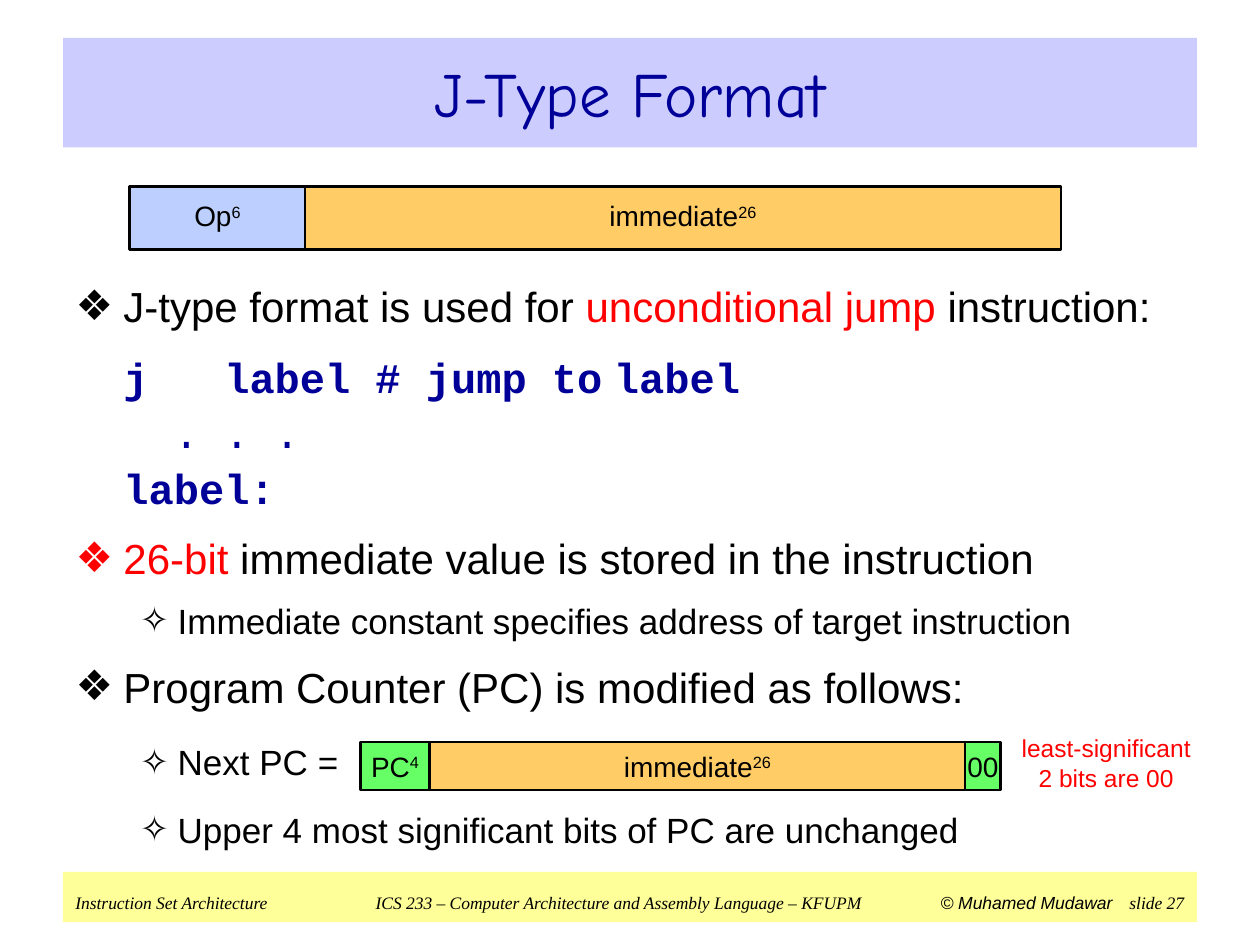
"""Build the J-Type Format slide with its field diagrams, bullet list and footer."""
from lxml.etree import SubElement
from pptx import Presentation
from pptx.dml.color import RGBColor
from pptx.enum.shapes import MSO_SHAPE
from pptx.enum.text import MSO_ANCHOR, MSO_AUTO_SIZE, PP_ALIGN
from pptx.oxml.ns import qn
from pptx.util import Inches, Pt

COLORS = {
    "black": "000000", "navy": "000099", "red": "FF0000", "lilac": "CCCCFF",
    "yellow": "FFFF99", "blue": "BCCFFE", "orange": "FFCC66", "green": "66FF66",
}

deck = Presentation()
deck.slide_width, deck.slide_height = Inches(10), Inches(7.5)
column, row = deck.slide_width / 100, deck.slide_height / 75
page = deck.slides.add_slide(deck.slide_layouts[1])


def write(para, text, size=24, font="Arial", color="black", bold=False, italic=False, raised=False):
    span = para.add_run()
    span.text = text
    span.font.size, span.font.name = Pt(size), font
    span.font.bold, span.font.italic = bold, italic
    span.font.color.rgb = RGBColor.from_string(COLORS[color])
    if raised:
        span.font._element.set("baseline", "30000")


def place(shape, left, top, width, height, fill=None):
    shape.left, shape.top = int(left * column), int(top * row)
    shape.width, shape.height = int(width * column), int(height * row)
    if fill:
        shape.fill.solid()
        shape.fill.fore_color.rgb = RGBColor.from_string(COLORS[fill])
    frame = shape.text_frame
    frame.word_wrap, frame.auto_size = True, MSO_AUTO_SIZE.NONE
    return frame


footer = page.shapes.add_shape(MSO_SHAPE.RECTANGLE, 0, 0, 0, 0)
footer.shadow.inherit = False
footer.line.fill.background()
frame = place(footer, 5, 69.2, 90, 4, "yellow")
frame.vertical_anchor = MSO_ANCHOR.BOTTOM
frame.margin_bottom = Inches(0.07)
para = frame.paragraphs[0]
para.alignment = PP_ALIGN.LEFT
stops = SubElement(para._p.get_or_add_pPr(), qn("a:tabLst"))
for position, side in ((4.31, "ctr"), (8.23, "r"), (8.8, "r")):
    SubElement(stops, qn("a:tab"), pos=str(Inches(position)), algn=side)
for text, font in (
    ("Instruction Set Architecture\tICS 233 – Computer Architecture and Assembly Language – KFUPM\t",
     "Times New Roman"),
    ("© Muhamed Mudawar", "Arial"),
    ("\tslide 27", "Times New Roman"),
):
    write(para, text, size=10, font=font, italic=True)

frame = place(page.shapes.title, 5, 3, 90, 8.7, "lilac")
frame.vertical_anchor = MSO_ANCHOR.MIDDLE
frame.paragraphs[0].alignment = PP_ALIGN.CENTER
write(frame.paragraphs[0], "J-Type Format", size=36, font="Comic Neue", color="navy")

code = {"font": "Courier New", "color": "navy", "bold": True}
red, small = {"color": "red"}, {"size": 20}
items = (
    (0, "❖", 11.5, (("J-type format is used for ", {}), ("unconditional jump ", red), ("instruction:", {}))),
    (0, None, 11.5, (("\tj   label\t# jump to", code), (" ", {"color": "navy"}), ("label", code))),
    (0, None, 2.8, (("\t  . . .", {**code, "bold": False}),)),
    (0, None, 2.8, (("\tlabel:", code),)),
    (0, "❖", 11.5, (("26-bit", red), (" immediate value is stored in the instruction", {}))),
    (1, "✧", 9.6, (("Immediate constant specifies address of target instruction", small),)),
    (0, "❖", 11, (("Program Counter (PC) is modified as follows:", {}),)),
    (1, "✧", 16.8, (("Next PC =", small),)),
    (1, "✧", 14.7, (("Upper 4 most significant bits of PC are unchanged", small),)),
)
frame = place(page.placeholders[1], 5, 21.8, 90, 47.2)
frame.vertical_anchor = MSO_ANCHOR.TOP
for index, (level, bullet, gap, spans) in enumerate(items):
    para = frame.add_paragraph() if index else frame.paragraphs[0]
    para.level = level
    para.space_before = Pt(gap if index else 0)
    margin, hang = ((0.38, 0.38), (0.81, 0.3))[level]
    props = para._p.get_or_add_pPr()
    props.set("marL", str(Inches(margin)))
    props.set("indent", str(-Inches(hang)))
    if bullet:
        SubElement(props, qn("a:buFont"), typeface="Arial")
        SubElement(props, qn("a:buChar"), char=bullet)
    else:
        SubElement(props, qn("a:buNone"))
    stops = SubElement(props, qn("a:tabLst"))
    for position in (2.75, 3.25):
        SubElement(stops, qn("a:tab"), pos=str(Inches(position)), algn="l")
    for text, style in spans:
        write(para, text, **style)

field_rows = (
    (10.3, 14.8, 5, 0.85, (("Op", "6", 13.9, "blue"), ("immediate", "26", 60, "orange"))),
    (28.6, 58.9, 3.8, 1, (("PC", "4", 5.5, "green"), ("immediate", "26", 42.5, "orange"),
                          ("00", "", 2.8, "green"))),
)
for left, top, height, spacing, fields in field_rows:
    for name, bits, width, fill in fields:
        box = page.shapes.add_shape(MSO_SHAPE.RECTANGLE, 0, 0, 0, 0)
        box.shadow.inherit = False
        box.line.color.rgb = RGBColor.from_string(COLORS["black"])
        box.line.width = Pt(1.5)
        frame = place(box, left, top, width, height, fill)
        frame.margin_left = frame.margin_right = frame.margin_top = frame.margin_bottom = 0
        frame.vertical_anchor = MSO_ANCHOR.MIDDLE
        para = frame.paragraphs[0]
        para.alignment, para.line_spacing = PP_ALIGN.CENTER, spacing
        write(para, name, size=16)
        if bits:
            write(para, bits, size=16, raised=True)
        left += width

note = page.shapes.add_textbox(0, 0, 0, 0)
frame = place(note, 79.6, 57.7, 16.4, 5.7)
frame.paragraphs[0].alignment = PP_ALIGN.CENTER
write(frame.paragraphs[0], "least-significant 2 bits are 00", size=14, color="red")

deck.save("out.pptx")
